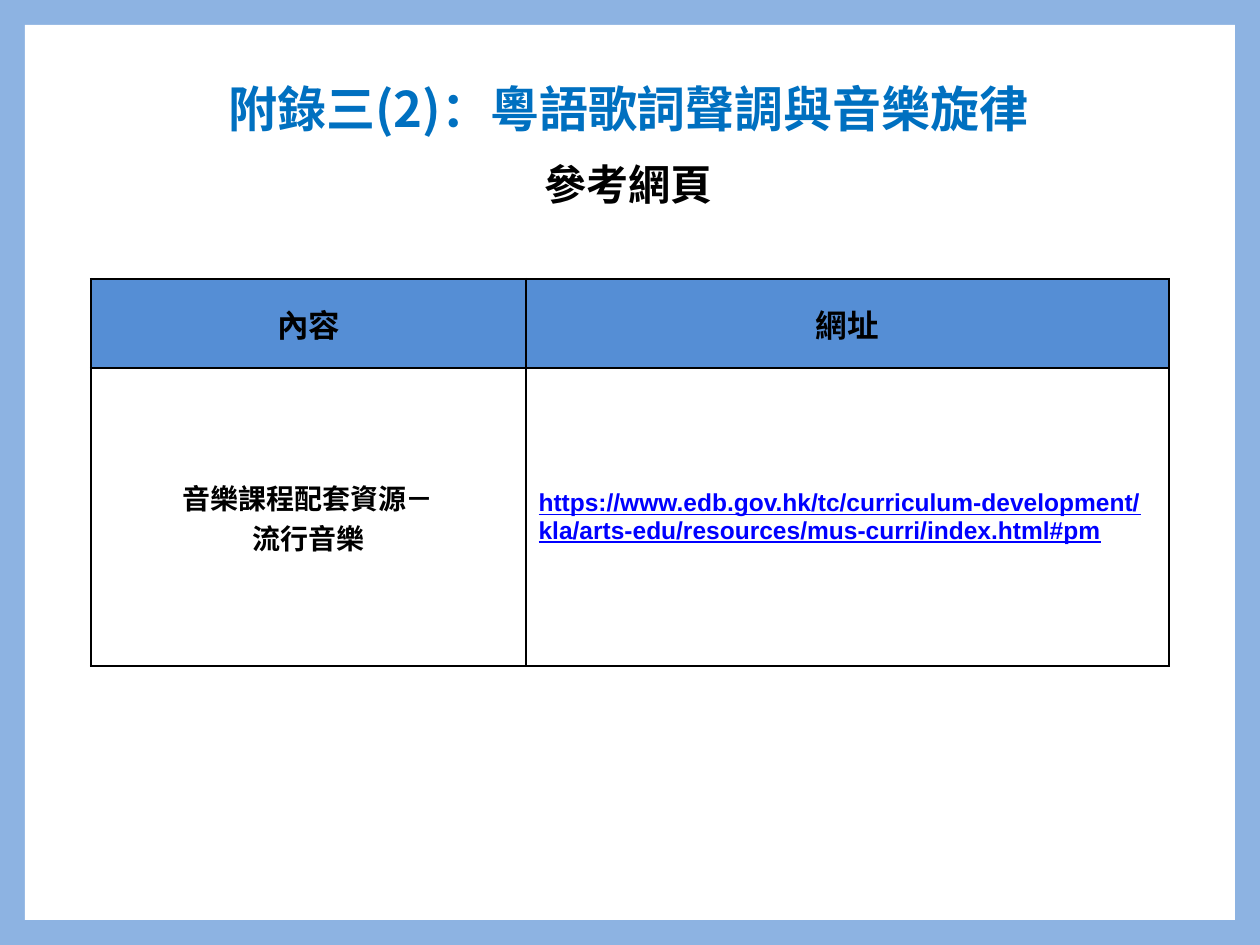
from lxml.etree import SubElement
from pptx import Presentation
from pptx.dml.color import RGBColor
from pptx.enum.shapes import MSO_SHAPE
from pptx.enum.text import MSO_ANCHOR, MSO_AUTO_SIZE, PP_ALIGN
from pptx.oxml import parse_xml
from pptx.oxml.ns import nsdecls, qn
from pptx.util import Emu, Pt

PX = 914400 / 126
CJK = "Noto Sans CJK SC"


def px(*vals):
    return [Emu(round(v * PX)) for v in vals]


def write(frame, text, size, face, hue="000000", align=PP_ALIGN.CENTER, line=1.0, under=False):
    frame.text = text
    frame.word_wrap = True
    for para in frame.paragraphs:
        form = {"alignment": align, "line_spacing": line, "space_before": Pt(0)}
        for key, val in form.items():
            setattr(para, key, val)
        run = para.runs[0]
        font = run.font
        form = {"size": Pt(size), "name": face, "bold": True, "underline": under}
        for key, val in form.items():
            setattr(font, key, val)
        font.color.rgb = RGBColor.from_string(hue)
        SubElement(run._r.get_or_add_rPr(), qn("a:ea")).set("typeface", CJK)


deck = Presentation()
deck.slide_width, deck.slide_height = px(1260, 945)
slide = deck.slides.add_slide(deck.slide_layouts[0])
back = slide.background.fill
back.solid()
back.fore_color.rgb = RGBColor.from_string("8DB3E2")

panel = slide.shapes.add_shape(MSO_SHAPE.RECTANGLE, *px(25, 25, 1210, 895))
panel.shadow.inherit = False
panel.fill.solid()
panel.fill.fore_color.rgb = RGBColor.from_string("FFFFFF")
panel.line.fill.background()
slide.shapes._spTree.insert(2, panel._element)

title, sub = slide.placeholders
heads = [
    (title, (118, 66, 1021, 92), "附錄三(2)：粵語歌詞聲調與音樂旋律", 28, "0070C0", MSO_ANCHOR.MIDDLE),
    (sub, (314, 158, 630, 58), "參考網頁", 24, "000000", MSO_ANCHOR.TOP),
]
for shape, box, text, size, hue, anchor in heads:
    shape.left, shape.top, shape.width, shape.height = px(*box)
    write(shape.text_frame, text, size, CJK, hue, line=0.9)
    shape.text_frame.auto_size = MSO_AUTO_SIZE.NONE
    shape.text_frame.vertical_anchor = anchor

table = slide.shapes.add_table(2, 2, *px(91, 279, 1078, 387)).table
for col, width in zip(table.columns, px(435, 643)):
    col.width = width
for row, height in zip(table.rows, px(89, 298)):
    row.height = height

link = "https://www.edb.gov.hk/tc/curriculum-development/kla/arts-edu/resources/mus-curri/index.html#pm"
cells = [
    ("內容", 18, {}),
    ("網址", 18, {}),
    ("音樂課程配套資源－\n流行音樂", 16, {}),
    (link, 14, {"hue": "0000FF", "align": PP_ALIGN.LEFT, "under": True}),
]
for spot, (cell, (text, size, form)) in enumerate(zip(table.iter_cells(), cells)):
    write(cell.text_frame, text, size, "Arial", **form)
    cell.vertical_anchor = MSO_ANCHOR.MIDDLE
    props = cell._tc.get_or_add_tcPr()
    for side in ("lnL", "lnR", "lnT", "lnB"):
        props.append(parse_xml(
            f'<a:{side} {nsdecls("a")} w="{Pt(1.5)}"><a:solidFill>'
            f'<a:srgbClr val="000000"/></a:solidFill></a:{side}>'))
    cell.fill.solid()
    cell.fill.fore_color.rgb = RGBColor.from_string("558ED5" if spot < 2 else "FFFFFF")

deck.save("out.pptx")
